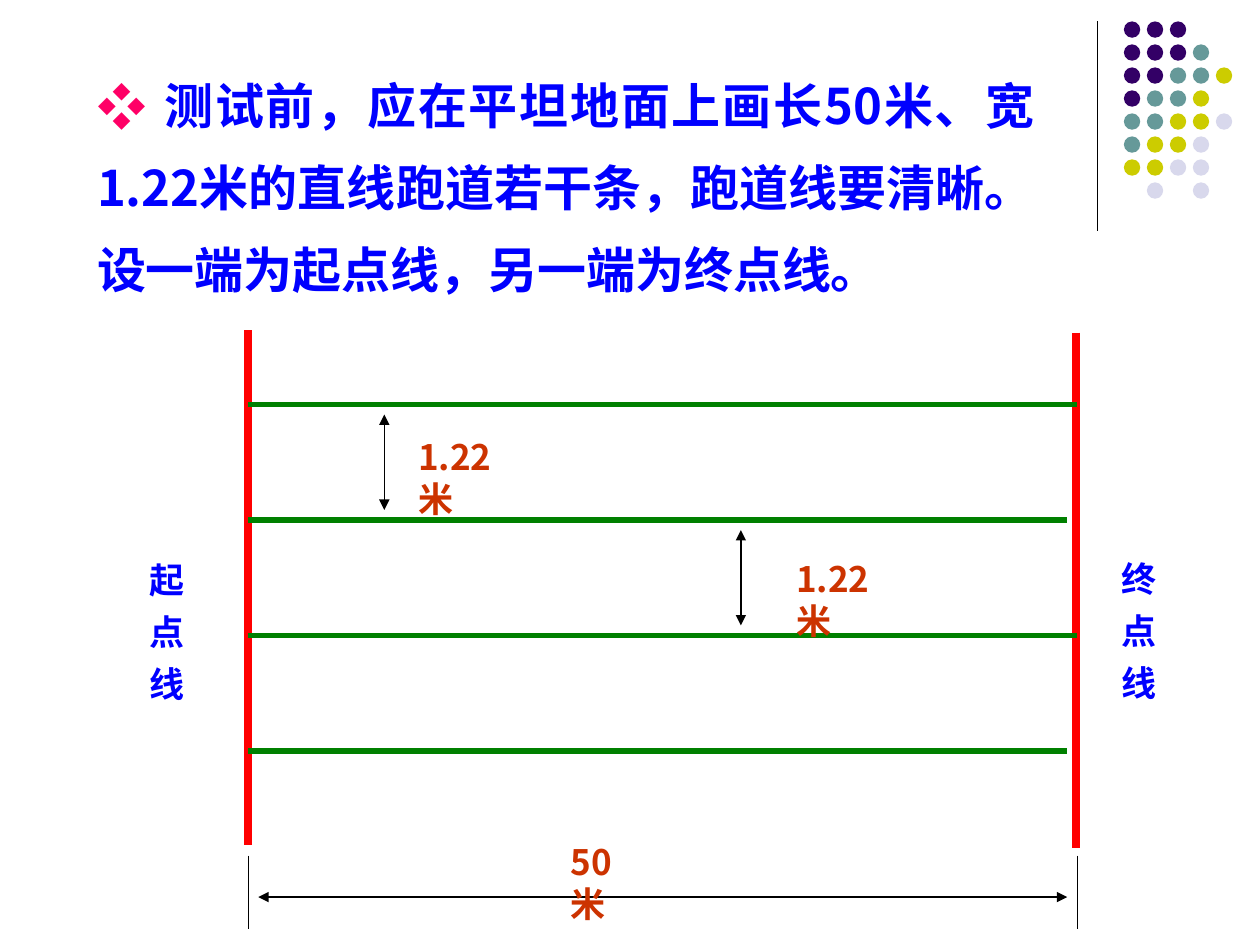
import pptx
import pptx.util
import pptx.dml.color
import pptx.enum.shapes
import pptx.enum.text
import pptx.oxml
import pptx.oxml.ns
from dataclasses import dataclass
from pptx.util import Inches


@dataclass(frozen=True)
class Theme:
    font: str = "Noto Sans CJK SC"
    serif: str = "Times New Roman"
    body: int = 28
    label: int = 20
    blue: str = "0000FF"
    pink: str = "FF0066"
    rust: str = "CC3300"
    red: str = "FF0000"
    green: str = "008000"
    black: str = "000000"
    thin: float = 0.75
    lane: float = 3
    edge: float = 4.5


THEME = Theme()
DOTS = {"P": "330066", "T": "669999", "Y": "CCCC00", "L": "D8D8EC"}
ROWS = ("PPP", "PPPT", "PPTTY", "PTTY", "TTYYL", "TYYL", "YYLL", ".L.L")


def color(code):
    return pptx.dml.color.RGBColor.from_string(code)


def node(owner, tag, **attrs):
    """Append a DrawingML element with the given attributes."""
    child = pptx.oxml.parse_xml(f"<a:{tag} {pptx.oxml.ns.nsdecls('a')}/>")
    for key, value in attrs.items():
        child.set(key, str(value))
    owner.append(child)
    return child


def draw_line(slide, x1, y1, x2, y2, code, width, arrows=False):
    line = slide.shapes.add_connector(
        pptx.enum.shapes.MSO_CONNECTOR.STRAIGHT,
        Inches(x1), Inches(y1), Inches(x2), Inches(y2))
    line.line.color.rgb = color(code)
    line.line.width = pptx.util.Pt(width)
    if arrows:
        for tag in ("headEnd", "tailEnd"):
            node(line.line._get_or_add_ln(), tag, type="triangle")
    node(line._element.spPr, "effectLst")


def add_run(para, text, face, size, code):
    run = para.add_run()
    run.text = text
    run.font.name = face
    run.font.size = pptx.util.Pt(size)
    run.font.bold = True
    run.font.color.rgb = color(code)
    node(run.font._element, "ea", typeface=THEME.font)
    return run


def add_label(slide, text, x, y, w, h):
    frame = slide.shapes.add_textbox(
        Inches(x), Inches(y), Inches(w), Inches(h)).text_frame
    frame.word_wrap = True
    add_run(frame.paragraphs[0], text, THEME.font, THEME.label, THEME.rust)


def add_side(slide, text, x, y, w, h):
    """Add a vertical label with widely spaced letters."""
    frame = slide.shapes.add_textbox(
        Inches(x), Inches(y), Inches(w), Inches(h)).text_frame
    frame.word_wrap = False
    frame._txBody.bodyPr.set("vert", "eaVert")
    run = add_run(frame.paragraphs[0], text, THEME.serif, THEME.label, THEME.blue)
    run.font._element.set("spc", "970")


def add_dots(slide, x, y, w, h):
    """Draw the corner rule and the dot grid to its right."""
    draw_line(slide, x, y, x, y + h, THEME.black, THEME.thin)
    size, left = 0.13, 0.21
    step = (w - left - size) / 4
    for row, codes in enumerate(ROWS):
        for col, key in enumerate(codes):
            if key not in DOTS:
                continue
            dot = slide.shapes.add_shape(
                pptx.enum.shapes.MSO_SHAPE.OVAL,
                Inches(x + left + col * step), Inches(y + row * step),
                Inches(size), Inches(size))
            dot.shadow.inherit = False
            dot.fill.solid()
            dot.fill.fore_color.rgb = color(DOTS[key])
            dot.line.fill.background()


def fill_body(slide, x, y, w, h):
    body = slide.placeholders[1]
    body.left, body.top, body.width, body.height = map(Inches, (x, y, w, h))
    frame = body.text_frame
    frame.word_wrap = True
    frame.auto_size = pptx.enum.text.MSO_AUTO_SIZE.NONE
    para = frame.paragraphs[0]
    para.alignment = pptx.enum.text.PP_ALIGN.JUSTIFY
    para.line_spacing = 1.4
    para.space_before = pptx.util.Pt(0)
    props = para._p.get_or_add_pPr()
    props.set("marL", "0")
    props.set("indent", "0")
    node(node(props, "buClr"), "srgbClr", val=THEME.pink)
    node(props, "buFont", typeface=THEME.font)
    node(props, "buChar", char="❖")
    node(node(props, "tabLst"), "tab", pos=Inches(0.52), algn="l")
    add_run(para, "\t测试前，应在平坦地面上画长50米、宽1.22米的直线跑道若干条，"
            "跑道线要清晰。设一端为起点线，另一端为终点线。",
            THEME.font, THEME.body, THEME.blue)


def add_track(slide, x, y, w, h):
    """Draw the lanes, end lines, gap marks and length mark."""
    right, foot = x + w, y + h
    inset = 0.08
    for edge, top in ((x, y), (right - 0.01, y + 0.02)):
        draw_line(slide, edge, top, edge, top + 4.09, THEME.red, THEME.edge)

    first, gap = y + 0.59, 0.917
    for lane in range(4):
        end = right - inset * (lane % 2)
        level = first + lane * gap
        draw_line(slide, x, level, end, level, THEME.green, THEME.lane)

    for lane, mark, shift in ((0, 1.08, 0.2), (1, 3.91, 0.25)):
        top = first + lane * gap
        draw_line(slide, x + mark, top + inset, x + mark, top + gap - inset,
                  THEME.black, THEME.thin, arrows=True)
        add_label(slide, "1.22米", x + mark + 0.17 * (lane + 1), top + shift, 1.04, 0.43)

    for edge in (x, right):
        draw_line(slide, edge, foot - 0.58, edge, foot, THEME.black, THEME.thin)
    draw_line(slide, x + inset, foot - 0.25, right - inset, foot - 0.25,
              THEME.black, THEME.thin, arrows=True)
    add_label(slide, "50米", x + 2.46, foot - 0.75, 0.76, 0.43)

    add_side(slide, "起点线", x - 0.97, y + 1.75, 0.53, 1.2)
    add_side(slide, "终点线", right + 0.17, y + 1.74, 0.53, 1.2)


def main():
    deck = pptx.Presentation()
    deck.slide_width, deck.slide_height = Inches(10), Inches(7.5)
    slide = deck.slides.add_slide(deck.slide_layouts[1])
    title = slide.shapes.title._element
    title.getparent().remove(title)
    add_dots(slide, 8.71, 0.17, 1.07, 1.66)
    fill_body(slide, 0.67, 0.36, 7.64, 2.06)
    add_track(slide, 1.97, 2.62, 6.58, 4.75)
    deck.save("out.pptx")


if __name__ == "__main__":
    main()
